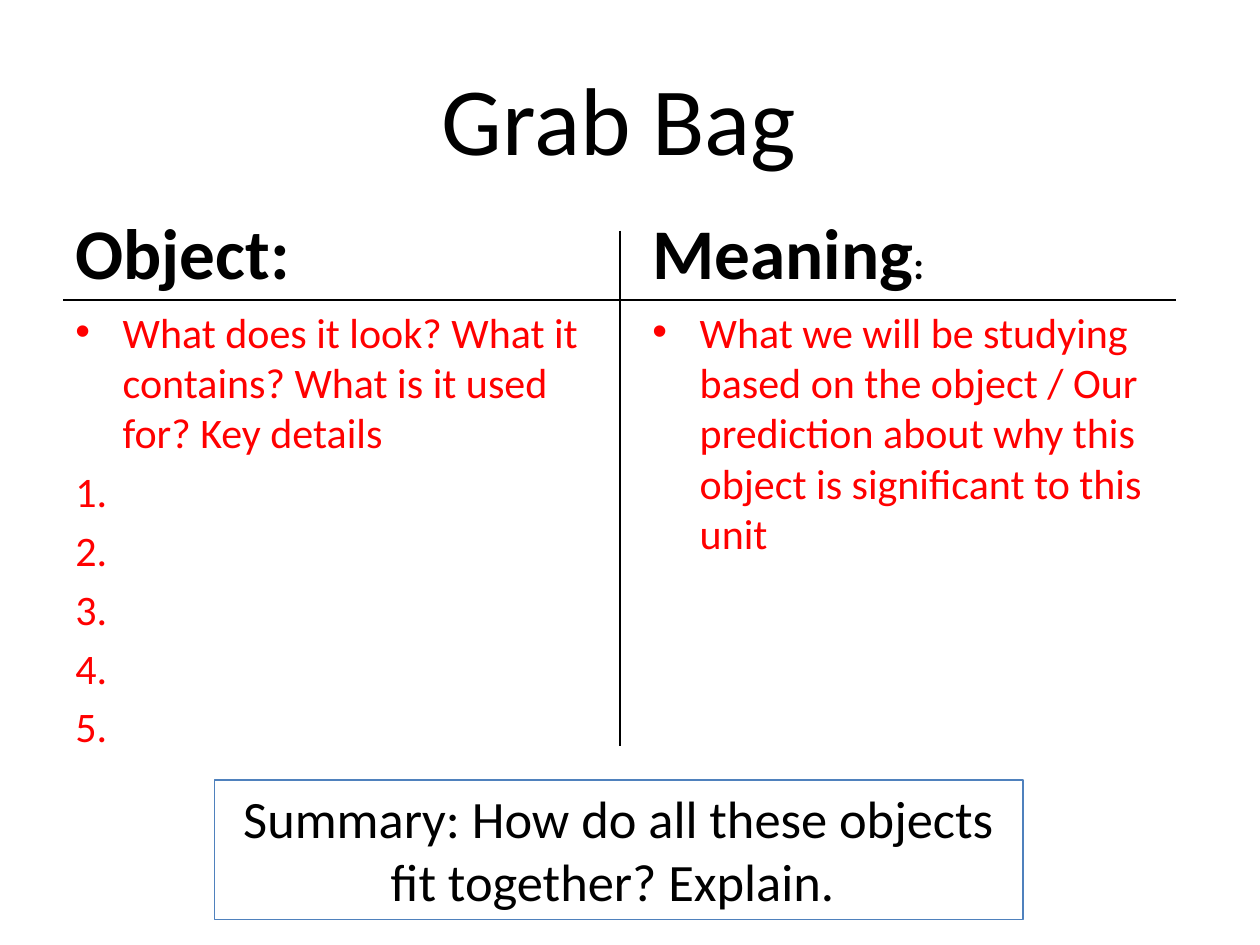
from lxml.etree import SubElement
from pptx import Presentation
from pptx.dml.color import RGBColor
from pptx.enum.shapes import MSO_CONNECTOR as Connector, MSO_SHAPE as Shape
from pptx.enum.text import MSO_ANCHOR as Anchor, PP_ALIGN as Align
from pptx.oxml.ns import qn
from pptx.util import Pt

BLACK = RGBColor(0x00, 0x00, 0x00)
RED = RGBColor(0xFF, 0x00, 0x00)
BLUE = RGBColor(0x4F, 0x81, 0xBD)

LEFT, RIGHT = 36, 365.76
COLUMN_WIDTH = 318.24
HEADING_TOP, RULE_Y = 120.96, 171.36
DIVIDER_X = LEFT + COLUMN_WIDTH


class Sheet:
    font = "Calibri"
    line_width = 0.75

    def __init__(self, slide):
        self.slide = slide

    def fill_text(self, frame, lines, size, color=BLACK, bold=False,
                  align=Align.LEFT, anchor=Anchor.TOP, space=0):
        frame.word_wrap = True
        frame.vertical_anchor = anchor
        frame.text = "\n".join(lines)
        for paragraph in frame.paragraphs:
            paragraph.alignment = align
            paragraph.space_before = Pt(space)
            paragraph.font.name = self.font
            paragraph.font.size = Pt(size)
            paragraph.font.bold = bold
            paragraph.font.color.rgb = color
        return frame.paragraphs

    def text(self, x, y, width, height, lines, size, **style):
        box = self.slide.shapes.add_textbox(Pt(x), Pt(y), Pt(width), Pt(height))
        return self.fill_text(box.text_frame, lines, size, **style)

    def heading(self, x, title):
        return self.text(x, HEADING_TOP, COLUMN_WIDTH, RULE_Y - HEADING_TOP, [title],
                         40.7, bold=True, anchor=Anchor.BOTTOM, space=8.14)[0]

    def column(self, x, prompt, numbers=()):
        first = self.text(x, RULE_Y, COLUMN_WIDTH, 311.04, [prompt, *numbers],
                          24, color=RED, space=4.8)[0]
        properties = first._p.get_or_add_pPr()
        properties.set("marL", str(Pt(27)))
        properties.set("indent", str(-Pt(27)))
        SubElement(properties, qn("a:buFont")).set("typeface", "Arial")
        SubElement(properties, qn("a:buChar")).set("char", "•")
        properties.append(properties.find(qn("a:defRPr")))

    def line(self, x1, y1, x2, y2):
        rule = self.slide.shapes.add_connector(
            Connector.STRAIGHT, Pt(x1), Pt(y1), Pt(x2), Pt(y2))
        rule.line.color.rgb = BLACK
        rule.line.width = Pt(self.line_width)
        SubElement(rule._element.spPr, qn("a:effectLst"))

    def framed_text(self, x, y, width, height, content, size):
        frame = self.slide.shapes.add_shape(
            Shape.RECTANGLE, Pt(x), Pt(y), Pt(width), Pt(height))
        frame.shadow.inherit = False
        frame.fill.background()
        frame.line.color.rgb = BLUE
        frame.line.width = Pt(self.line_width)
        self.fill_text(frame.text_frame, [content], size, align=Align.CENTER)


def main():
    deck = Presentation()
    deck.slide_width, deck.slide_height = Pt(720), Pt(540)
    sheet = Sheet(deck.slides.add_slide(deck.slide_layouts[6]))

    sheet.text(LEFT, 21.6, 648, 90, ["Grab Bag "], 55,
               align=Align.CENTER, anchor=Anchor.MIDDLE)

    sheet.heading(LEFT, "Object:")
    sheet.column(
        LEFT, "What does it look? What it contains? What is it used for? Key details",
        [f"{number}." for number in range(1, 6)])

    meaning = sheet.heading(RIGHT, "Meaning")
    colon = meaning.add_run()
    colon.text = ":"
    colon.font.size = Pt(22.2)
    sheet.column(
        RIGHT, "What we will be studying based on the object / Our prediction "
        "about why this object is significant to this unit")

    sheet.line(DIVIDER_X, 131.76, DIVIDER_X, 426.24)
    sheet.line(LEFT, RULE_Y, 671.76, RULE_Y)

    sheet.framed_text(122.4, 445.68, 462.24, 79.92,
                      "Summary: How do all these objects fit together? Explain. ", 30)
    deck.save("out.pptx")


if __name__ == "__main__":
    main()
